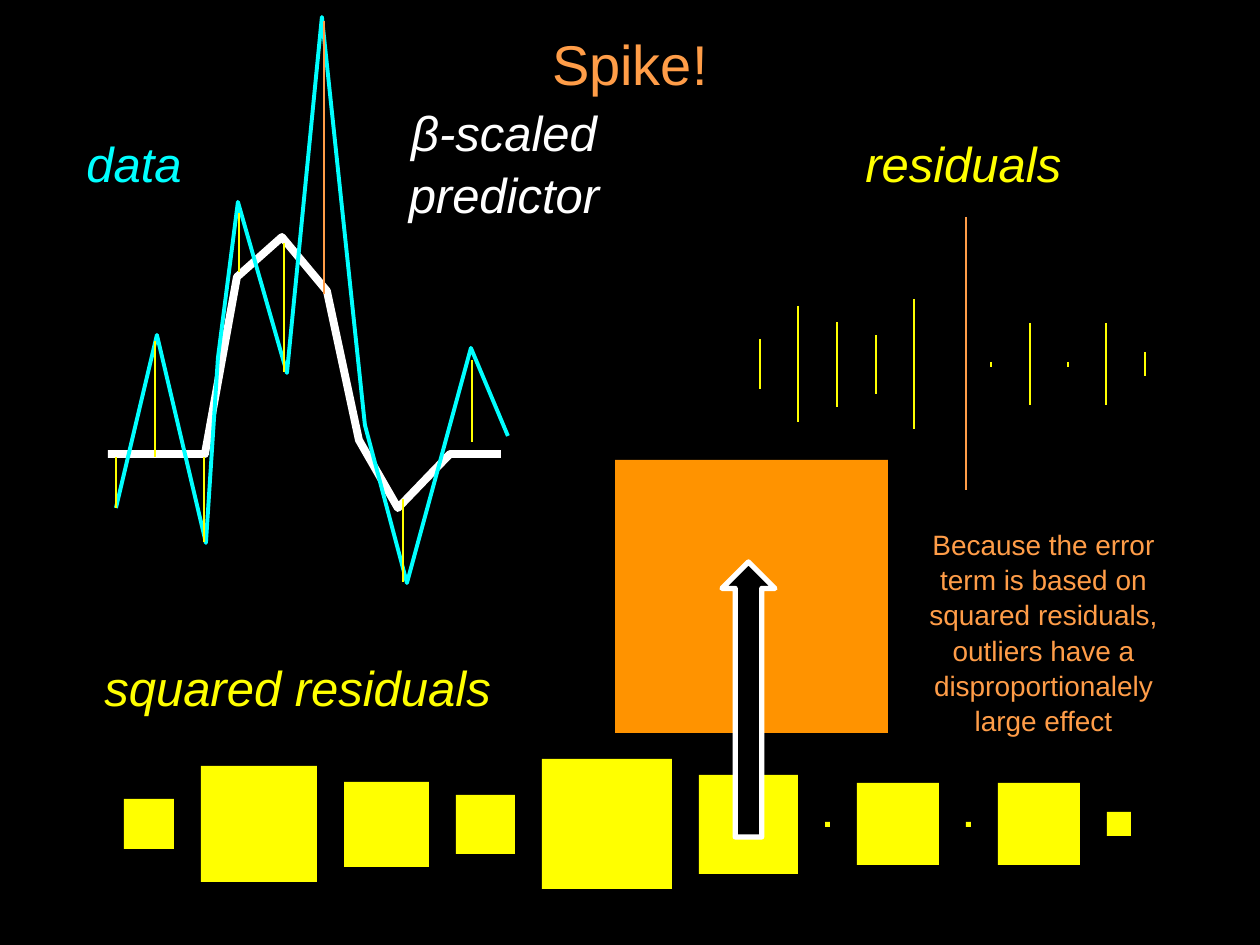
from typing import NamedTuple

from lxml.etree import SubElement
from pptx import Presentation
from pptx.dml.color import RGBColor
from pptx.enum.shapes import MSO_CONNECTOR as CONN, MSO_SHAPE as SHAPE
from pptx.enum.text import MSO_ANCHOR as ANCHOR, PP_ALIGN as ALIGN
from pptx.oxml.ns import qn
from pptx.util import Emu, Pt

BLACK = RGBColor(0x00, 0x00, 0x00)
WHITE = RGBColor(0xFF, 0xFF, 0xFF)
CYAN = RGBColor(0x00, 0xFF, 0xFF)
YELLOW = RGBColor(0xFF, 0xFF, 0x00)
PEACH = RGBColor(0xFF, 0x9D, 0x48)
ORANGE = RGBColor(0xFF, 0x93, 0x00)
FONT = "Arial"
PX_PER_INCH = 126


class Box(NamedTuple):
    x: int
    y: int
    w: int
    h: int


class Label(NamedTuple):
    text: str
    box: Box
    color: RGBColor
    size: int = 28
    italic: bool = True
    wrap: bool = False
    align: ALIGN = ALIGN.LEFT


class Curve(NamedTuple):
    points: list[tuple[int, int]]
    color: RGBColor
    weight: float


class Residual(NamedTuple):
    x: int
    top: int
    bottom: int
    color: RGBColor = YELLOW


def px(n: float) -> Emu:
    return Emu(round(n * 914400 / PX_PER_INCH))


def add_label(shapes, label: Label) -> None:
    s = shapes.add_textbox(*map(px, label.box))
    tf = s.text_frame
    tf.word_wrap = label.wrap
    tf.vertical_anchor = ANCHOR.MIDDLE
    p = tf.paragraphs[0]
    p.alignment = label.align
    p.line_spacing = 1.05
    r = p.add_run()
    r.text = label.text
    r.font.name = FONT
    r.font.size = Pt(label.size)
    r.font.italic = label.italic
    r.font.color.rgb = label.color


def set_line(s, color: RGBColor, weight: float) -> None:
    s.line.color.rgb = color
    s.line.width = Pt(weight)


def round_joins(s) -> None:
    SubElement(s.line._get_or_add_ln(), qn("a:round"))


def add_curve(shapes, curve: Curve) -> None:
    points = [(px(x), px(y)) for x, y in curve.points]
    builder = shapes.build_freeform(*points[0])
    builder.add_line_segments(points[1:], close=False)
    s = builder.convert_to_shape()
    s.shadow.inherit = False
    s.fill.background()
    set_line(s, curve.color, curve.weight)
    round_joins(s)


def add_residual(shapes, res: Residual) -> None:
    s = shapes.add_connector(CONN.STRAIGHT, px(res.x), px(res.top),
                             px(res.x), px(res.bottom))
    set_line(s, res.color, 0.75)
    SubElement(s._element.spPr, qn("a:effectLst"))


def add_filled(shapes, kind: SHAPE, box: Box, fill: RGBColor):
    s = shapes.add_shape(kind, *map(px, box))
    s.shadow.inherit = False
    s.fill.solid()
    s.fill.fore_color.rgb = fill
    s.line.fill.background()
    return s


LABELS = [
    Label("Spike!", Box(94, 22, 1072, 79), PEACH, 32, False, True, ALIGN.CENTER),
    Label("residuals", Box(853, 125, 224, 72), YELLOW),
    Label("data", Box(74, 125, 122, 72), CYAN),
    Label("β-scaled predictor", Box(378, 96, 252, 131), WHITE,
          wrap=True, align=ALIGN.CENTER),
    Label("squared residuals", Box(92, 649, 417, 72), YELLOW),
    Label("Because the error term is based on squared residuals, "
          "outliers have a disproportionalely large effect",
          Box(898, 523, 291, 217), PEACH, 16, False, True, ALIGN.CENTER),
]

PREDICTOR = Curve([(108, 454), (205, 454), (237, 277), (282, 237), (327, 291),
                   (359, 440), (398, 508), (450, 454), (501, 454)], WHITE, 4.5)
DATA = Curve([(116, 508), (157, 335), (206, 543), (218, 358), (238, 202),
              (287, 373), (322, 17), (365, 425), (407, 583), (471, 348),
              (508, 436)], CYAN, 2.25)

# Gaps between the data and the predictor
GAPS = [
    Residual(116, 457, 508), Residual(155, 341, 457), Residual(204, 457, 542),
    Residual(239, 213, 272), Residual(284, 243, 372),
    Residual(324, 21, 294, PEACH),
    Residual(403, 499, 582), Residual(472, 360, 442),
]

# Each size is both a residual's length and the side of its square
SIZES = [50, 116, 85, 59, 130, 99, 5, 82, 5, 82, 24]
SPIKE_INDEX = 5
SPIKE_SIZE = 273
RESIDUAL_LEFT, RESIDUAL_SPAN, RESIDUAL_MID = 760, 385, 364
SQUARE_LEFT, SQUARE_GAP, SQUARE_MID = 124, 27, 824


def main() -> None:
    prs = Presentation()
    prs.slide_width, prs.slide_height = px(1260), px(945)
    slide = prs.slides.add_slide(prs.slide_layouts[6])
    slide.background.fill.solid()
    slide.background.fill.fore_color.rgb = BLACK
    shapes = slide.shapes

    # Data, predictor and the gaps between them
    add_curve(shapes, PREDICTOR)
    add_curve(shapes, DATA)
    for gap in GAPS:
        add_residual(shapes, gap)

    # Residuals lined up around one height
    for i, size in enumerate(SIZES):
        if i != SPIKE_INDEX:
            x = RESIDUAL_LEFT + round(i * RESIDUAL_SPAN / (len(SIZES) - 1))
            top = RESIDUAL_MID - size // 2
            add_residual(shapes, Residual(x, top, top + size))

    # Squared residuals, with the spike's square above the row
    add_filled(shapes, SHAPE.RECTANGLE,
               Box(615, 460, SPIKE_SIZE, SPIKE_SIZE), ORANGE)
    x = SQUARE_LEFT
    for size in SIZES:
        add_filled(shapes, SHAPE.RECTANGLE,
                   Box(x, SQUARE_MID - size // 2, size, size), YELLOW)
        x += size + SQUARE_GAP

    for label in LABELS:
        add_label(shapes, label)

    # Arrow to the spike's square, and the spike's residual
    arrow = add_filled(shapes, SHAPE.UP_ARROW, Box(722, 562, 53, 275), BLACK)
    set_line(arrow, WHITE, 3)
    round_joins(arrow)
    add_residual(shapes, Residual(966, 217, 217 + SPIKE_SIZE, PEACH))

    prs.save("out.pptx")


if __name__ == "__main__":
    main()
